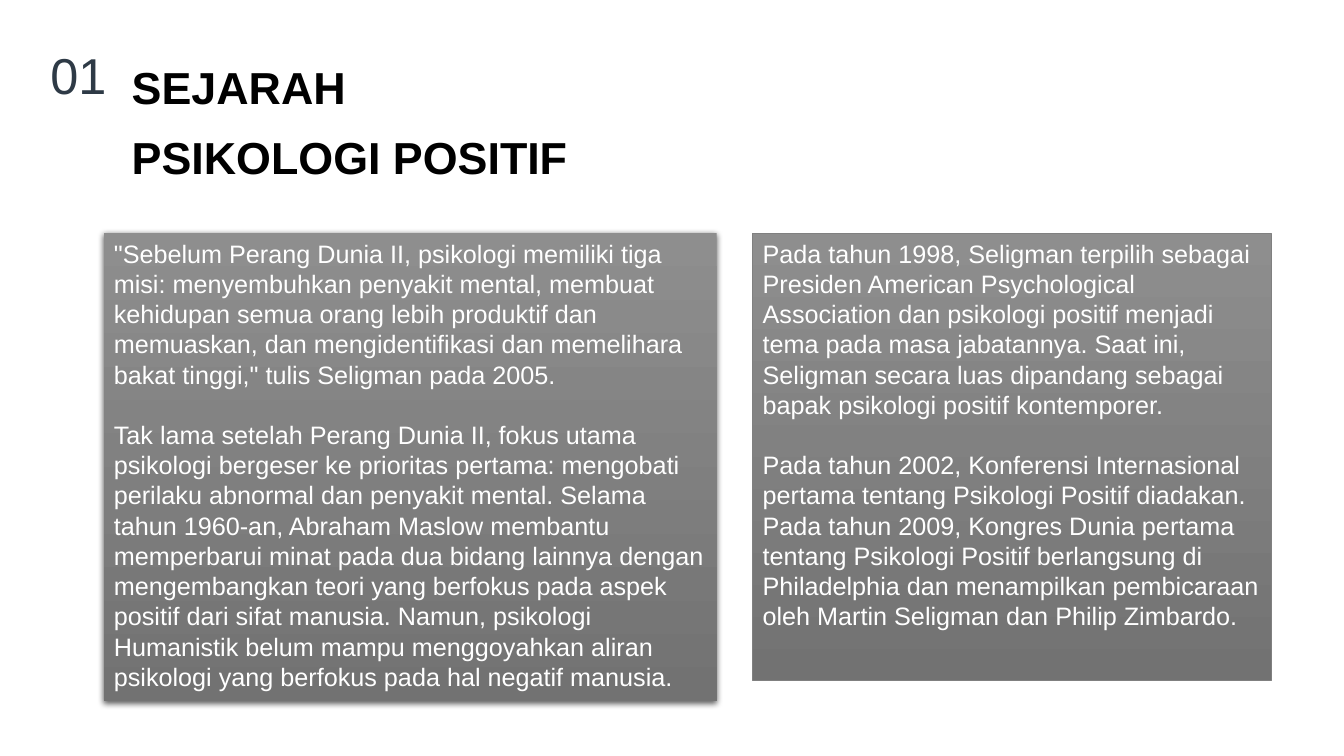
from lxml import etree
from pptx import Presentation
from pptx.dml.color import RGBColor
from pptx.enum.shapes import MSO_SHAPE
from pptx.enum.text import MSO_ANCHOR, PP_ALIGN
from pptx.oxml.ns import qn
from pptx.util import Cm, Pt

RECTANGLE = MSO_SHAPE.RECTANGLE
TOP = MSO_ANCHOR.TOP
LEFT = PP_ALIGN.LEFT
FONT = "Arial"
COLORS = {
    "title": "000000",
    "number": "2E3A46",
    "body": "FFFFFF",
    "panel_top": "8E8E8E",
    "panel_bottom": "727272",
    "outline": "808080",
    "shadow": "000000",
}


def write(shape, paragraphs, size, color, bold=False):
    frame = shape.text_frame
    frame.word_wrap = True
    frame.vertical_anchor = TOP
    frame.text = "\n".join(paragraphs)
    for paragraph in frame.paragraphs:
        paragraph.alignment = LEFT
        for run in paragraph.runs:
            run.font.name = FONT
            run.font.size = Pt(size)
            run.font.bold = bold
            run.font.color.rgb = RGBColor.from_string(COLORS[color])
    return frame


prs = Presentation()
prs.slide_width = Cm(33.87)
prs.slide_height = Cm(19.05)
slide = prs.slides.add_slide(prs.slide_layouts[6])

title = slide.shapes.add_textbox(Cm(3.07), Cm(0.97), Cm(11.71), Cm(3.63))
write(title, ["SEJARAH PSIKOLOGI POSITIF"], 32, "title", True).paragraphs[0].line_spacing = 1.3

before_1998 = [
    '"Sebelum Perang Dunia II, psikologi memiliki tiga misi: menyembuhkan penyakit mental, '
    "membuat kehidupan semua orang lebih produktif dan memuaskan, dan mengidentifikasi dan "
    'memelihara bakat tinggi," tulis Seligman pada 2005.',
    "Tak lama setelah Perang Dunia II, fokus utama psikologi bergeser ke prioritas pertama: "
    "mengobati perilaku abnormal dan penyakit mental. Selama tahun 1960-an, Abraham Maslow "
    "membantu memperbarui minat pada dua bidang lainnya dengan mengembangkan teori yang "
    "berfokus pada aspek positif dari sifat manusia. Namun, psikologi Humanistik belum mampu "
    "menggoyahkan aliran psikologi yang berfokus pada hal negatif manusia.",
]
since_1998 = [
    "Pada tahun 1998, Seligman terpilih sebagai Presiden American Psychological Association "
    "dan psikologi positif menjadi tema pada masa jabatannya. Saat ini, Seligman secara luas "
    "dipandang sebagai bapak psikologi positif kontemporer.",
    "Pada tahun 2002, Konferensi Internasional pertama tentang Psikologi Positif diadakan. "
    "Pada tahun 2009, Kongres Dunia pertama tentang Psikologi Positif berlangsung di "
    "Philadelphia dan menampilkan pembicaraan oleh Martin Seligman dan Philip Zimbardo.",
]

panels = []
for left, width, height, history in (
    (2.62, 15.44, 11.79, before_1998),
    (18.97, 13.06, 11.28, since_1998),
):
    panel = slide.shapes.add_shape(RECTANGLE, Cm(left), Cm(5.87), Cm(width), Cm(height))
    panel.shadow.inherit = False
    panel.fill.gradient()
    panel.fill.gradient_angle = 270
    for stop, position, shade in zip(panel.fill.gradient_stops, (0, 1), ("panel_top", "panel_bottom")):
        stop.position = position
        stop.color.rgb = RGBColor.from_string(COLORS[shade])
    write(panel, history, 18, "body").paragraphs[1].space_before = Pt(21.6)
    panels.append(panel)

early_panel, recent_panel = panels
early_panel.line.fill.background()
recent_panel.line.color.rgb = RGBColor.from_string(COLORS["outline"])
recent_panel.line.width = Pt(0.5)

effects = early_panel.fill._xPr.find(qn("a:effectLst"))
shadow = etree.SubElement(
    effects, qn("a:outerShdw"), blurRad=str(Pt(4.5)), dist=str(Pt(1.5)), dir="5400000", rotWithShape="0"
)
shadow_color = etree.SubElement(shadow, qn("a:srgbClr"), val=COLORS["shadow"])
etree.SubElement(shadow_color, qn("a:alpha"), val="63000")

number = slide.shapes.add_textbox(Cm(1.02), Cm(0.99), Cm(3.12), Cm(1.8))
write(number, ["01"], 36, "number")

prs.save("out.pptx")
